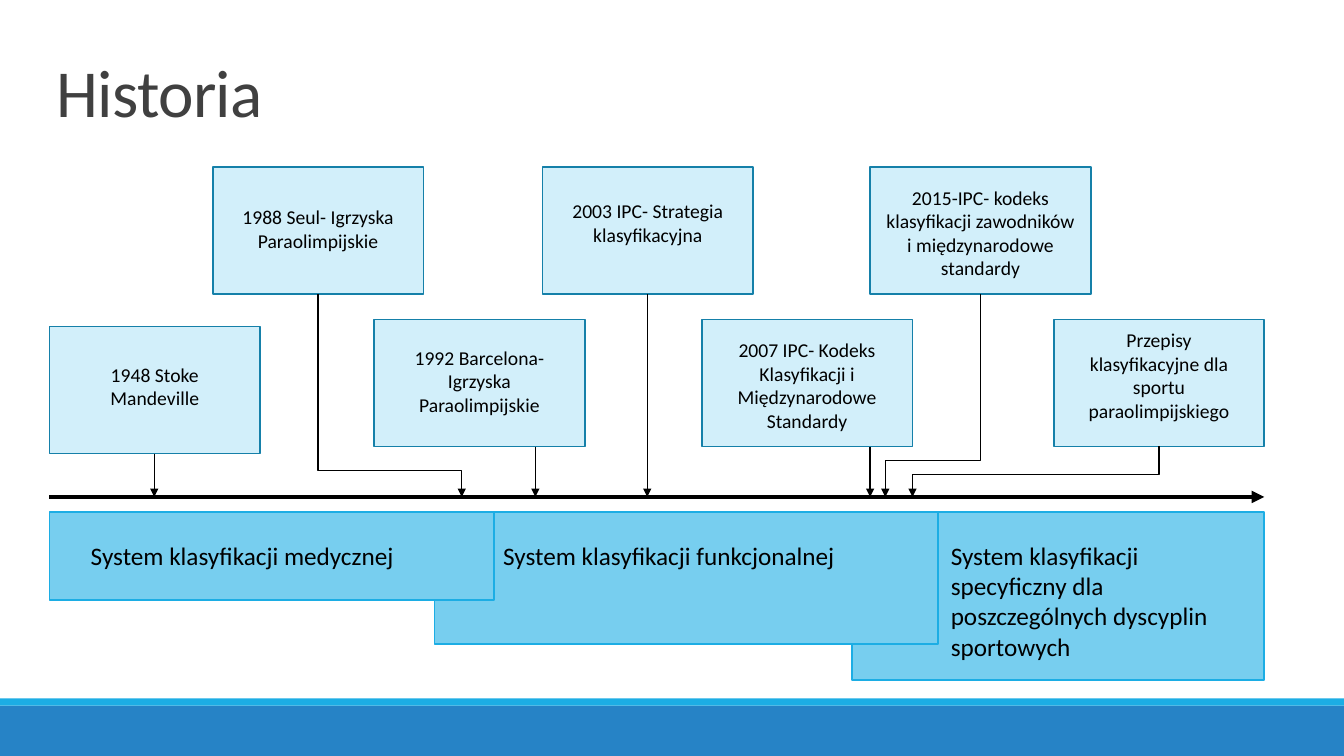
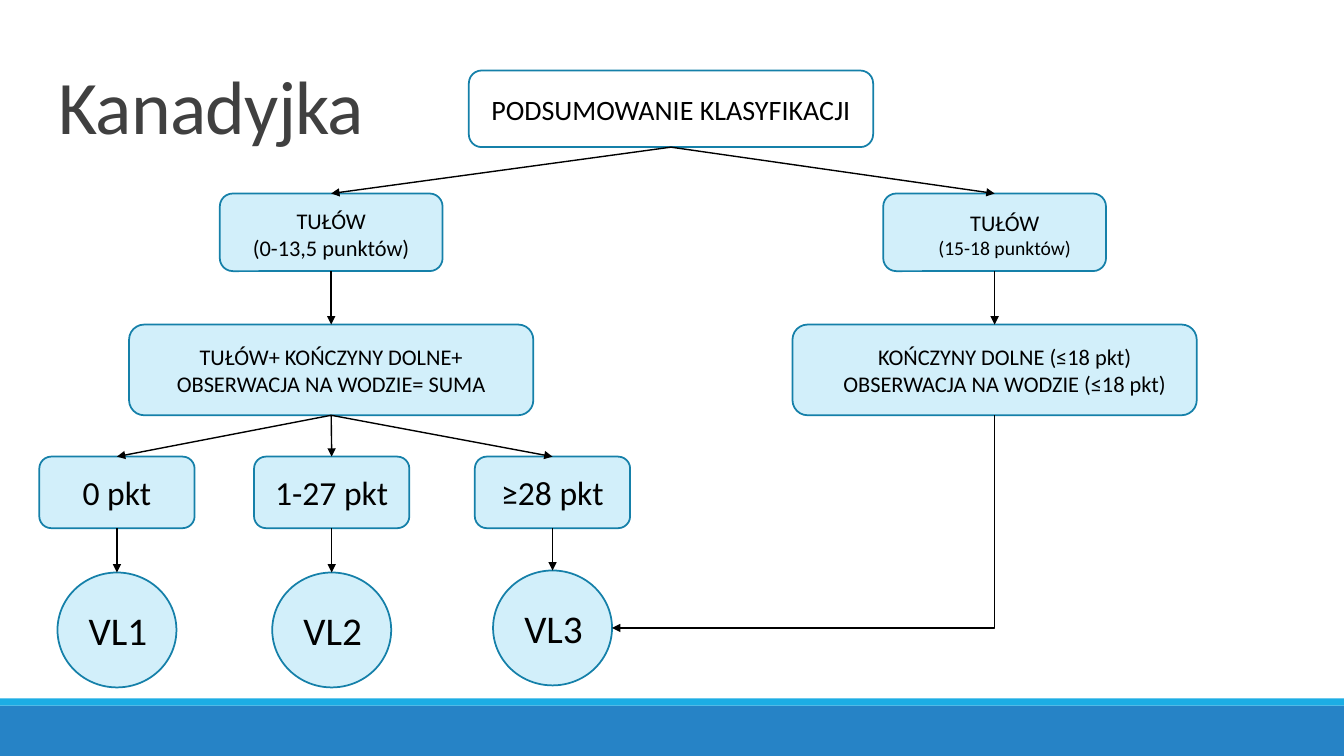
import lxml.etree
import pptx
import pptx.util
import pptx.dml.color
import pptx.enum.shapes
import pptx.enum.text
import pptx.oxml.ns

Inches = pptx.util.Inches
Pt = pptx.util.Pt
RGB = pptx.dml.color.RGBColor
KIND = pptx.enum.shapes.MSO_SHAPE
LINK = pptx.enum.shapes.MSO_CONNECTOR
ALIGN = pptx.enum.text.PP_ALIGN
ANCHOR = pptx.enum.text.MSO_ANCHOR
qn = pptx.oxml.ns.qn

WHITE = RGB(0xFF, 0xFF, 0xFF)
BLACK = RGB(0, 0, 0)
GREY = RGB(0x40, 0x40, 0x40)
BLUE = RGB(0x26, 0x83, 0xC6)
CYAN = RGB(0x1C, 0xAD, 0xE4)
SKY = RGB(0x77, 0xCE, 0xEF)
PALE = RGB(0xD2, 0xEF, 0xFA)
TEAL = RGB(0x15, 0x80, 0xA9)
FONT = "Calibri"
WIDE, HIGH = 13.33, 7.5


def style(text, size, color, align):
    """Format every paragraph and run of a text frame."""
    for para in text.paragraphs:
        para.alignment = align
        for run in para.runs:
            run.font.name = FONT
            run.font.size = Pt(size)
            run.font.color.rgb = color


def panel(slide, kind, box, fill, edge=None):
    """Draw a flat filled shape with an optional outline."""
    shape = slide.shapes.add_shape(kind, *map(Inches, box))
    shape.shadow.inherit = False
    shape.fill.solid()
    shape.fill.fore_color.rgb = fill
    if edge is None:
        shape.line.fill.background()
    else:
        shape.line.color.rgb = edge
        shape.line.width = Pt(1.25)
    return shape


def label(shape, words, size, pads, align=ALIGN.CENTER, anchor=ANCHOR.MIDDLE):
    """Write text into a shape with left, top, right and bottom margins."""
    text = shape.text_frame
    text.text = words
    text.word_wrap = True
    text.vertical_anchor = anchor
    text.margin_left, text.margin_top, text.margin_right, text.margin_bottom = map(Inches, pads)
    style(text, size, BLACK, align)


def node(slide, kind, box, words, size, shift=(0, 0), pad=0.1, fill=PALE):
    """Draw an outlined box with centred text moved by a small shift."""
    shape = panel(slide, kind, box, fill, TEAL)
    dx, dy = shift
    label(shape, words, size, (pad + max(0, 2 * dx), 0.02 + max(0, 2 * dy),
                               pad, 0.02 + max(0, -2 * dy)))
    return shape


def link(slide, start, end, width=1, kind=LINK.STRAIGHT):
    """Draw a black arrow between two points."""
    line = slide.shapes.add_connector(kind, *map(Inches, (*start, *end)))
    line.line.color.rgb = BLACK
    line.line.width = Pt(width)
    props = line.element.spPr
    tip = lxml.etree.SubElement(props.find(qn("a:ln")), qn("a:tailEnd"))
    tip.set("type", "triangle")
    lxml.etree.SubElement(props, qn("a:effectLst"))
    return line


def bend(slide, start, end, turn=None):
    """Draw an elbow arrow that leaves downwards, with one or two corners."""
    (ax, ay), (bx, by) = start, end
    mx, my = (ax + bx) / 2, (ay + by) / 2
    rx, ry = abs(by - ay) / 2, abs(bx - ax) / 2
    line = link(slide, (mx - rx, my - ry), (mx + rx, my + ry), kind=LINK.ELBOW)
    frame = line.element.spPr.find(qn("a:xfrm"))
    right = bx > ax
    frame.set("rot", str((270 if right else 90) * 60000))
    if right:
        frame.set("flipH", "1")
    form = line.element.spPr.find(qn("a:prstGeom"))
    if turn is None:
        form.set("prst", "bentConnector2")
    else:
        guide = lxml.etree.SubElement(form.find(qn("a:avLst")), qn("a:gd"))
        guide.set("name", "adj1")
        guide.set("fmla", f"val {round(turn * 100000)}")


def top(box):
    """Return the middle of the upper edge."""
    return box[0] + box[2] / 2, box[1]


def base(box):
    """Return the middle of the lower edge."""
    return box[0] + box[2] / 2, box[1] + box[3]


def bands(layout, slide):
    """Place the two footer bands on the layout."""
    for num, (y, high, fill) in enumerate([(7, 0.5, BLUE), (6.93, 0.07, CYAN)]):
        band = panel(slide, KIND.RECTANGLE, (0, y, WIDE, high), fill)
        band.element.nvSpPr.cNvPr.set("id", str(20 + num))
        layout.shapes.element.append(band.element)


def title(slide, box, words, size):
    """Place and format the title placeholder."""
    head = slide.shapes.title
    head.left, head.top, head.width, head.height = map(Inches, box)
    text = head.text_frame
    text.text = words
    text.auto_size = pptx.enum.text.MSO_AUTO_SIZE.NONE
    text.vertical_anchor = ANCHOR.BOTTOM
    style(text, size, GREY, ALIGN.LEFT)
    text.paragraphs[0].line_spacing = 0.85
    for props in head.element.iter(qn("a:rPr")):
        props.set("spc", "-50")


def phases(slide, box):
    """Draw the overlapping system blocks below the axis."""
    left, y = box[:2]
    rows = [
        (7.96, 4.09, 1.67, 0.98, "System klasyfikacji specyficzny dla poszczególnych dyscyplin sportowych"),
        (3.82, 4.99, 1.31, 0.68, "System klasyfikacji funkcjonalnej"),
        (0, 4.41, 0.87, 0.41, "System klasyfikacji medycznej"),
    ]
    for x, wide, high, inset, words in rows:
        shape = panel(slide, KIND.RECTANGLE, (left + x, y, wide, high), SKY, CYAN)
        label(shape, words, 18, (inset, 0.28, 0.33, 0), ALIGN.LEFT, ANCHOR.TOP)


def events(slide, box):
    """Draw the dated boxes, the time axis and the arrows between them."""
    left, y, wide, high = box
    axis = y + high
    rows = [
        (0, 1.58, 2.09, -0.04, 1.04, None, "1948 Stoke Mandeville"),
        (3.22, 1.51, 2.09, -0.02, 4.82, None, "1992 Barcelona- Igrzyska Paraolimpijskie"),
        (1.62, 0, 2.09, -0.02, 4.09, 0.87, "1988 Seul- Igrzyska Paraolimpijskie"),
        (4.89, 0, 2.09, -0.08, 5.93, None, "2003 IPC- Strategia klasyfikacyjna"),
        (6.47, 1.51, 2.09, 0.02, 8.14, None, "2007 IPC- Kodeks Klasyfikacji i Międzynarodowe Standardy"),
        (8.14, 0, 2.19, 0.02, 8.29, 0.82, "2015-IPC- kodeks klasyfikacji zawodników i międzynarodowe standardy"),
        (9.96, 1.51, 2.09, -0.08, 8.56, 0.56, "Przepisy klasyfikacyjne dla sportu paraolimpijskiego"),
    ]
    link(slide, (left, axis), (left + wide, axis), 3)
    for x, drop, size, dy, stop, turn, words in rows:
        card = (left + x, y + drop, size, 1.26)
        pad = 0.14 if size > 2.1 else 0.22
        node(slide, KIND.RECTANGLE, card, words, 14, (0, dy), pad)
        end = (left + stop, axis)
        if turn is None:
            link(slide, (end[0], base(card)[1]), end)
        else:
            bend(slide, base(card), end, turn)


def tree(slide, box):
    """Draw the decision tree from the summary to the three classes."""
    left, y = box[:2]
    round_box = KIND.ROUNDED_RECTANGLE
    root = (left + 4.26, y, 4.01, 0.76)
    node(slide, round_box, root, "PODSUMOWANIE KLASYFIKACJI", 20, fill=WHITE)
    rows = [
        (2.89, 0, 0.1, "TUŁÓW\n(0-13,5 punktów)", "TUŁÓW+ KOŃCZYNY DOLNE+ OBSERWACJA NA WODZIE= SUMA"),
        (9.47, 0.1, 0.15, "TUŁÓW\n(15-18 punktów)", "KOŃCZYNY DOLNE (≤18 pkt) OBSERWACJA NA WODZIE (≤18 pkt)"),
    ]
    sums = []
    for mid, dx, pad, trunk, total in rows:
        upper = (left + mid - 1.1, y + 1.22, 2.21, 0.77)
        lower = (left + mid - 2, y + 2.52, 4.01, 0.9)
        part = node(slide, round_box, upper, trunk, 16, (dx, 0.02))
        node(slide, round_box, lower, total, 16, (dx, 0), pad)
        link(slide, base(root), top(upper))
        link(slide, base(upper), top(lower))
        sums.append(lower)
    part.text_frame.paragraphs[1].runs[0].font.size = Pt(14)
    leaves = [(0, 4.98, "0 pkt", "VL1"), (2.13, 4.98, "1-27 pkt", "VL2"), (4.32, 4.96, "≥28 pkt", "VL3")]
    for x, drop, score, name in leaves:
        leaf = (left + x, y + 3.83, 1.54, 0.71)
        disc = (left + x + 0.18, y + drop, 1.18, 1.14)
        node(slide, round_box, leaf, score, 24, pad=0.02)
        node(slide, KIND.FLOWCHART_CONNECTOR, disc, name, 28, (0.01, 0), 0)
        link(slide, base(sums[0]), top(leaf))
        link(slide, base(leaf), top(disc))
    bend(slide, base(sums[1]), (disc[0] + disc[2], disc[1] + disc[3] / 2))


def main():
    """Build and save both slides."""
    deck = pptx.Presentation()
    deck.slide_width, deck.slide_height = Inches(WIDE), Inches(HIGH)
    layout = deck.slide_layouts[5]
    past = deck.slides.add_slide(layout)
    bands(layout, past)
    title(past, (0.46, -0.24, 11, 1.59), "Historia", 48)
    phases(past, (0.49, 5.08, 12.05, 1.67))
    events(past, (0.49, 1.66, 12.05, 3.27))
    canoe = deck.slides.add_slide(layout)
    title(canoe, (0.48, 0.41, 3.29, 1.13), "Kanadyjka", 54)
    tree(canoe, (0.39, 0.7, 11.47, 6.12))
    deck.save("out.pptx")


if __name__ == "__main__":
    main()
